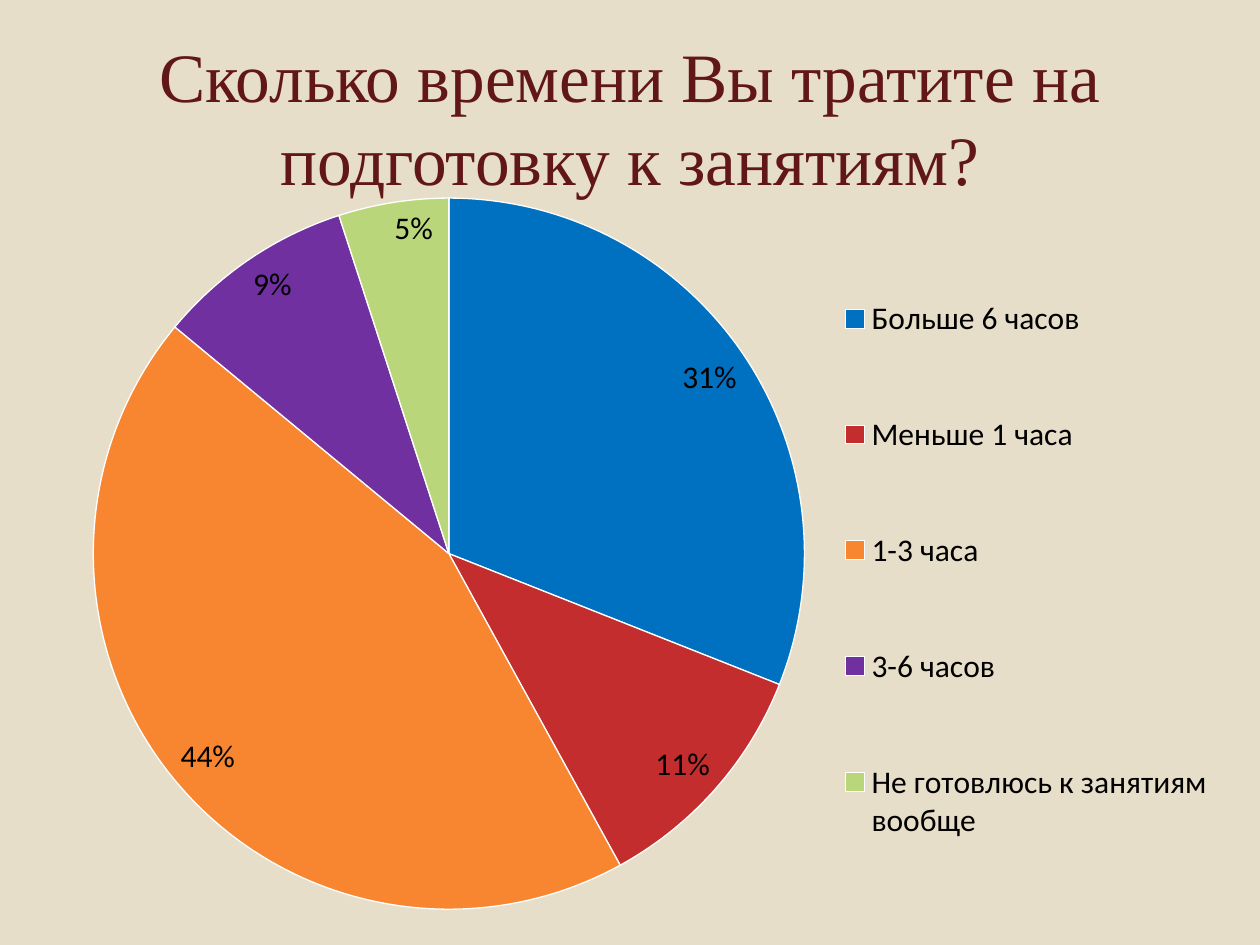
from dataclasses import dataclass

from lxml import etree
from pptx import Presentation
from pptx.chart.data import CategoryChartData
from pptx.dml.color import RGBColor
from pptx.enum.chart import XL_CHART_TYPE, XL_LABEL_POSITION, XL_LEGEND_POSITION
from pptx.enum.text import MSO_ANCHOR, MSO_AUTO_SIZE, PP_ALIGN
from pptx.oxml.ns import qn
from pptx.util import Cm, Pt

PIE = XL_CHART_TYPE.PIE
INSIDE_END = XL_LABEL_POSITION.INSIDE_END
RIGHT = XL_LEGEND_POSITION.RIGHT
MIDDLE = MSO_ANCHOR.MIDDLE
NO_AUTOFIT = MSO_AUTO_SIZE.NONE
CENTER = PP_ALIGN.CENTER
TITLE_ONLY = 5


@dataclass(frozen=True)
class Theme:
    background: str = "E7DEC9"
    heading: str = "621717"
    text: str = "000000"
    outline: str = "FFFFFF"
    heading_font: str = "Times New Roman"
    chart_font: str = "Calibri"
    heading_size: float = 39.6
    chart_size: float = 18
    outline_width: float = 0.75


ANSWERS = [
    ("Больше 6 часов", 31, "0070C0"),
    ("Меньше 1 часа", 11, "C32D2E"),
    ("1-3 часа", 44, "F88631"),
    ("3-6 часов", 9, "7030A0"),
    ("Не готовлюсь к занятиям вообще", 5, "B9D77A"),
]


class SlideBuilder:
    def __init__(self, presentation, theme):
        self.theme = theme
        self.slide = presentation.slides.add_slide(presentation.slide_layouts[TITLE_ONLY])
        fill = self.slide.background.fill
        fill.solid()
        fill.fore_color.rgb = RGBColor.from_string(theme.background)

    def style_font(self, font, name, size, color):
        font.name = name
        font.size = Pt(size)
        font.color.rgb = RGBColor.from_string(color)

    def title(self, wording, left, top, width, height):
        heading = self.slide.shapes.title
        heading.left, heading.top = Cm(left), Cm(top)
        heading.width, heading.height = Cm(width), Cm(height)
        frame = heading.text_frame
        frame.word_wrap = True
        frame.auto_size = NO_AUTOFIT
        frame.vertical_anchor = MIDDLE
        paragraph = frame.paragraphs[0]
        paragraph.alignment = CENTER
        run = paragraph.add_run()
        run.text = wording
        self.style_font(run.font, self.theme.heading_font,
                        self.theme.heading_size, self.theme.heading)

    def place(self, layout, **settings):
        for child in list(layout):
            layout.remove(child)
        manual = etree.SubElement(layout, qn("c:manualLayout"))
        for tag, value in settings.items():
            etree.SubElement(manual, qn(f"c:{tag}")).set("val", str(value))

    def pie(self, answers, left, top, width, height):
        labels, shares, colors = zip(*answers)
        data = CategoryChartData()
        data.categories = labels
        data.add_series("Series 1", shares)
        chart = self.slide.shapes.add_chart(
            PIE, Cm(left), Cm(top), Cm(width), Cm(height), data).chart
        chart.has_title = False
        self.style_font(chart.font, self.theme.chart_font,
                        self.theme.chart_size, self.theme.text)

        plot = chart.plots[0]
        plot.vary_by_categories = True
        plot.has_data_labels = True
        percentages = plot.data_labels
        percentages.show_value = False
        percentages.show_percentage = True
        percentages.number_format = "0%"
        percentages.number_format_is_linked = False
        percentages.position = INSIDE_END
        for index, color in enumerate(colors):
            wedge = plot.series[0].points[index].format
            wedge.fill.solid()
            wedge.fill.fore_color.rgb = RGBColor.from_string(color)
            wedge.line.color.rgb = RGBColor.from_string(self.theme.outline)
            wedge.line.width = Pt(self.theme.outline_width)

        chart.has_legend = True
        legend = chart.legend
        legend.position = RIGHT
        legend.include_in_layout = False
        plot_area = chart.element.chart.plotArea
        plot_layout = plot_area.find(qn("c:layout"))
        if plot_layout is None:
            plot_layout = etree.Element(qn("c:layout"))
            plot_area.insert(0, plot_layout)
        self.place(plot_layout, layoutTarget="inner", xMode="edge", yMode="edge",
                   x=0.04, y=0.08, w=0.6, h=0.9)
        legend_element = chart.element.chart.find(qn("c:legend"))
        legend_layout = legend_element.find(qn("c:layout"))
        if legend_layout is None:
            legend_layout = etree.Element(qn("c:layout"))
            legend_element.find(qn("c:legendPos")).addnext(legend_layout)
        self.place(legend_layout, xMode="edge", yMode="edge",
                   x=0.66, y=0.11, w=0.33, h=0.88)


def main():
    presentation = Presentation()
    presentation.slide_width, presentation.slide_height = Cm(25.4), Cm(19.05)
    builder = SlideBuilder(presentation, Theme())
    builder.title("Сколько времени Вы тратите на подготовку к занятиям?",
                  1.27, 0.76, 22.86, 3.18)
    builder.pie(ANSWERS, 0.89, 2.72, 24, 15.93)
    presentation.save("out.pptx")


if __name__ == "__main__":
    main()
